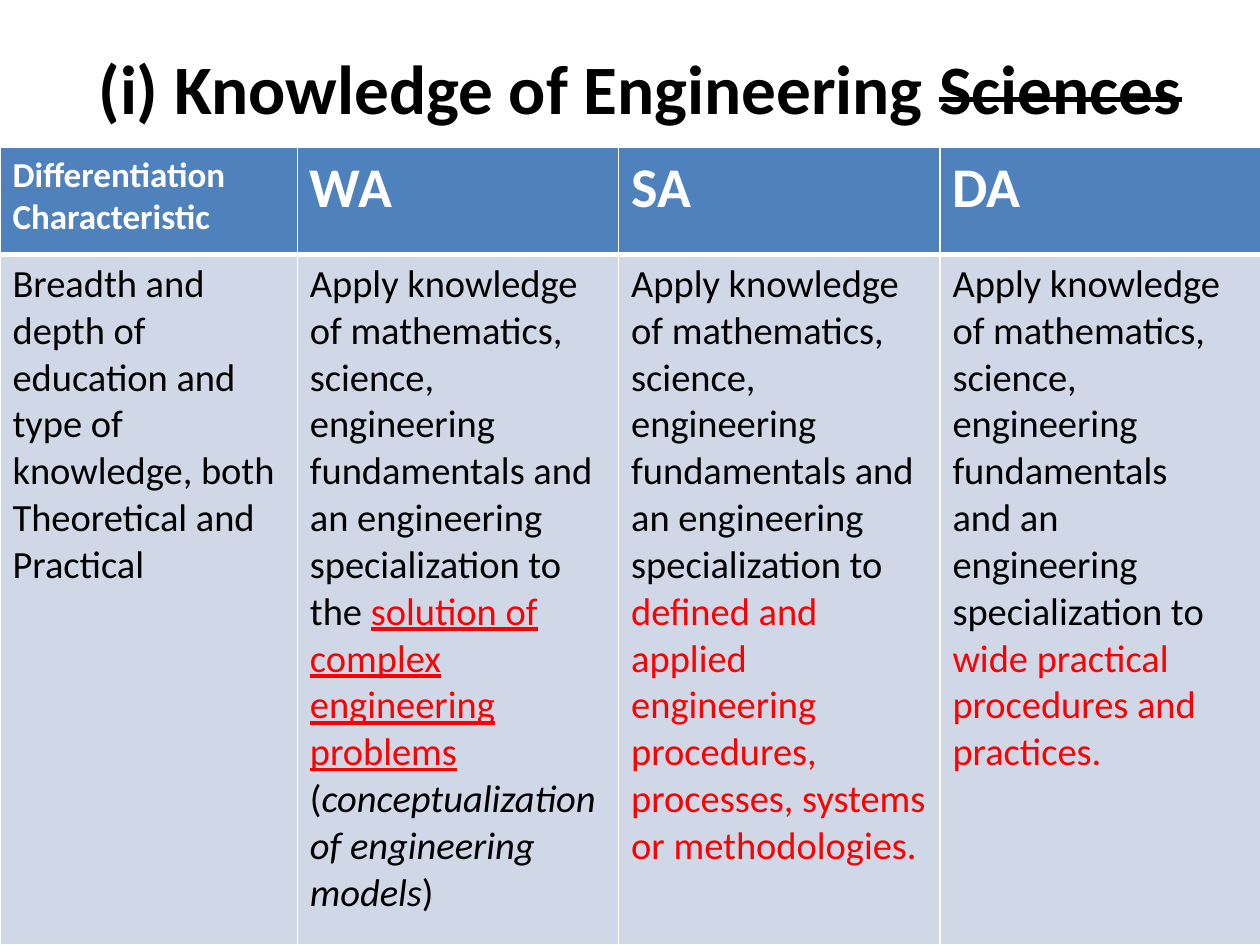
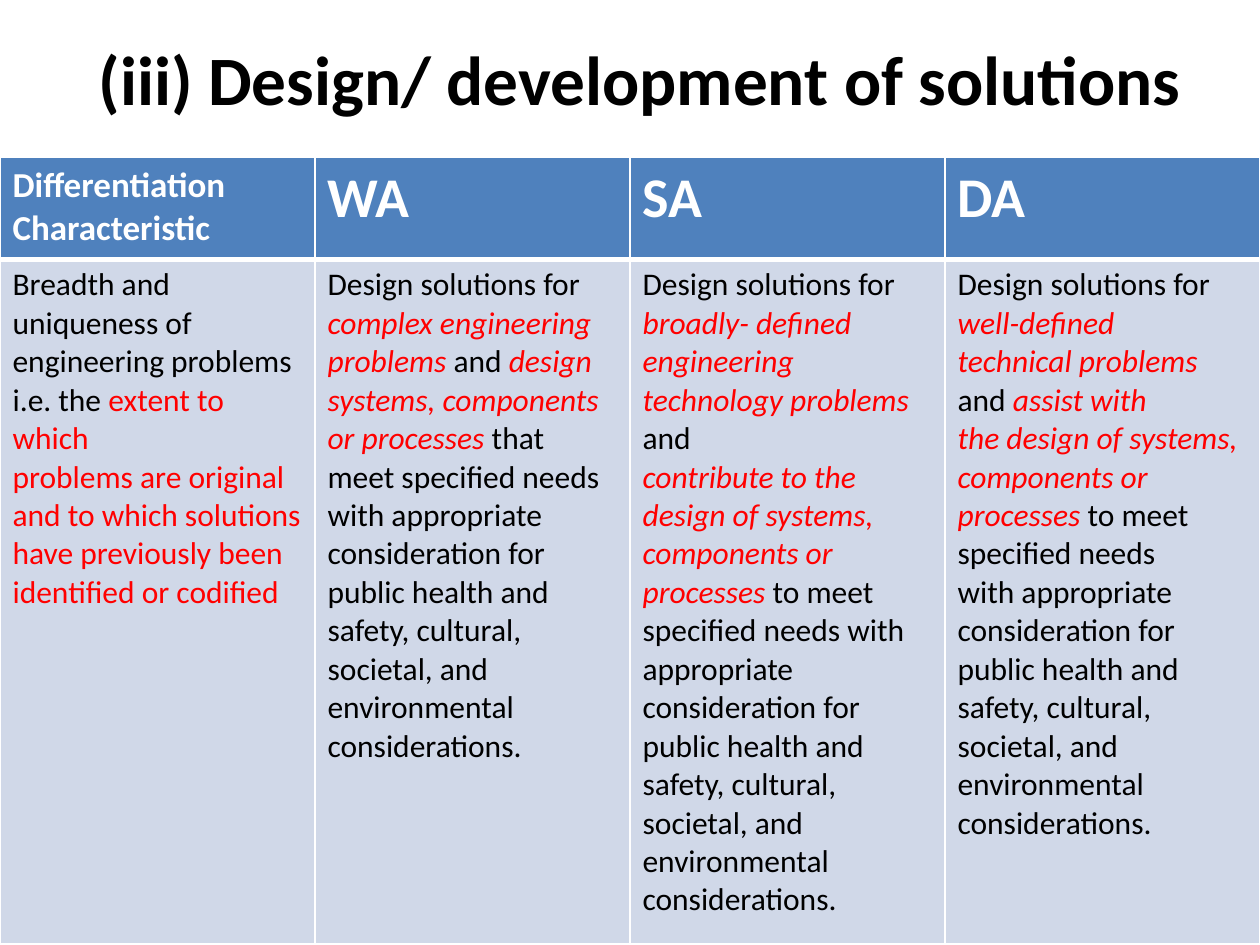
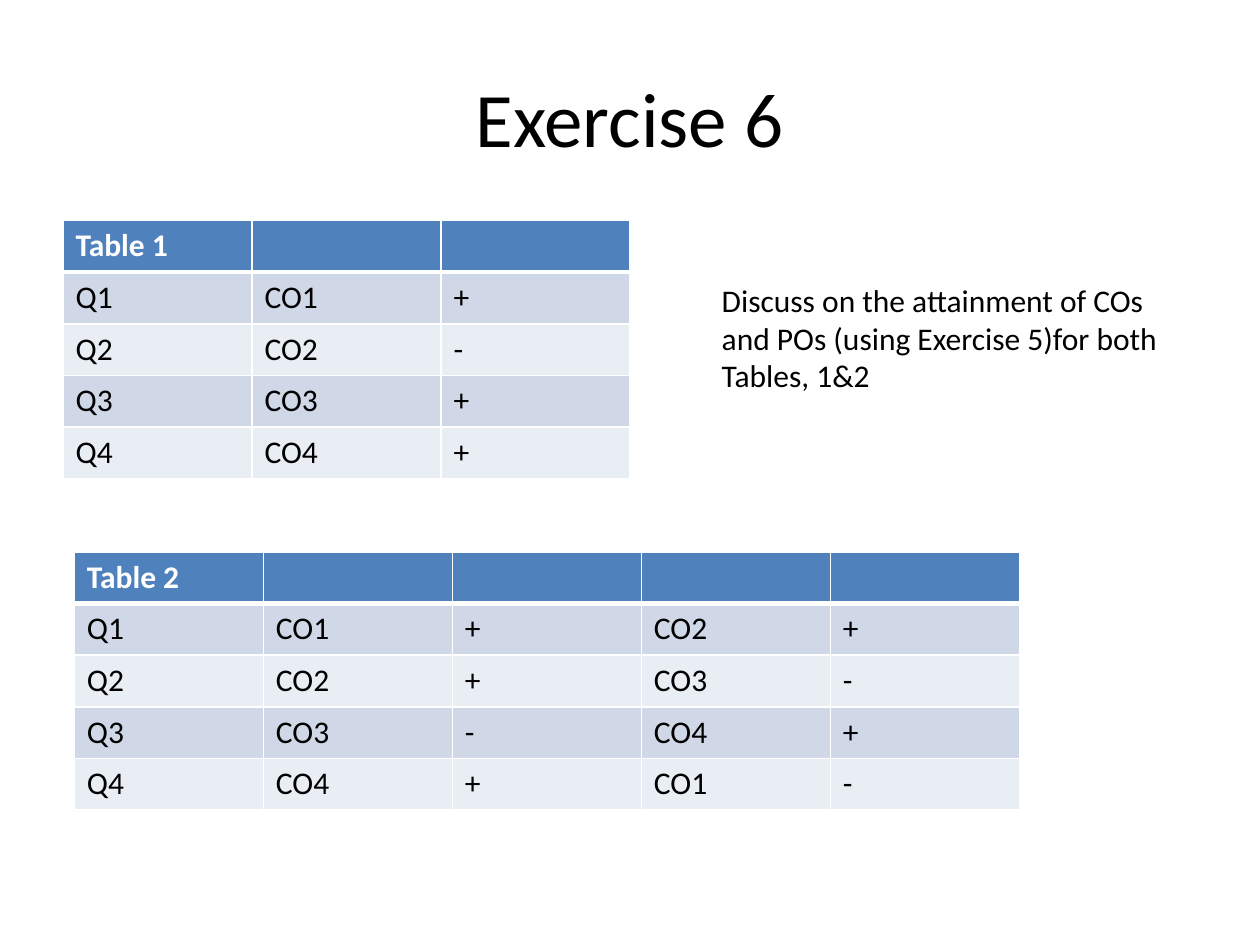
from dataclasses import dataclass

from lxml.etree import SubElement
from pptx import Presentation
from pptx.dml.color import RGBColor
from pptx.enum.text import MSO_ANCHOR, MSO_AUTO_SIZE, PP_ALIGN
from pptx.oxml.ns import qn
from pptx.util import Inches, Pt


@dataclass(frozen=True)
class Theme:
    font: str = "Calibri"
    black: str = "000000"
    white: str = "FFFFFF"
    red: str = "FF0000"
    header: str = "4F81BD"
    bands: tuple = ("D0D8E8", "E9EDF4")
    thin: float = 1
    thick: float = 3
    title: float = 44
    long_title: float = 39.6
    programme: float = 32
    label: float = 20
    wide_body: float = 22
    body: float = 18


theme = Theme()


def write(frame, paragraphs, align=None, **base):
    """Fill a frame; a paragraph is a string or a list of strings and (text, format) pairs."""
    for index, runs in enumerate(paragraphs):
        para = frame.paragraphs[0] if index == 0 else frame.add_paragraph()
        para.alignment = align
        for run in [runs] if isinstance(runs, str) else runs:
            text, extra = (run, {}) if isinstance(run, str) else run
            style = {"color": theme.black, "size": theme.body, **base, **extra}
            span = para.add_run()
            span.text = text
            span.font.name = theme.font
            span.font.size = Pt(style["size"])
            span.font.color.rgb = RGBColor.from_string(style["color"])
            span.font.bold = style.get("bold", False)
            span.font.italic = style.get("italic", False)
            span.font.underline = style.get("underline", False)
            if style.get("strike"):
                span._r.get_or_add_rPr().set("strike", "sngStrike")


def add_banded_table(slide, left, top, widths, heights, rows, size=theme.body):
    """Add a table whose cells are lists of paragraphs, with a header row and white rules."""
    table = slide.shapes.add_table(
        len(rows), len(widths), Inches(left), Inches(top),
        Inches(sum(widths)), Inches(sum(heights))).table
    for column, width in zip(table.columns, widths):
        column.width = Inches(width)
    for row_index, (row, height) in enumerate(zip(rows, heights)):
        table.rows[row_index].height = Inches(height)
        is_header = row_index == 0
        for column_index, paragraphs in enumerate(row):
            cell = table.cell(row_index, column_index)
            for side in ("lnL", "lnR", "lnT", "lnB"):
                below_header = (row_index, side) in ((0, "lnB"), (1, "lnT"))
                weight = theme.thick if below_header else theme.thin
                line = SubElement(cell._tc.get_or_add_tcPr(), qn(f"a:{side}"), w=str(Pt(weight)))
                SubElement(SubElement(line, qn("a:solidFill")), qn("a:srgbClr"), val=theme.white)
            cell.fill.solid()
            cell.fill.fore_color.rgb = RGBColor.from_string(
                theme.header if is_header else theme.bands[(row_index - 1) % 2])
            write(cell.text_frame, paragraphs, size=size, bold=is_header,
                  color=theme.white if is_header else theme.black)


RED = {"color": theme.red}
RED_ITALIC = {**RED, "italic": True}
RED_UNDERLINED = {**RED, "underline": True}

programme_header = [[[("Differentiation Characteristic", {"size": theme.label})]]] + [
    [[(name, {"size": theme.programme})]] for name in ("WA", "SA", "DA")]

knowledge_row = [
    ["Breadth and depth of",
     "education and type of knowledge, both",
     "Theoretical and Practical"],
    [["Apply knowledge of mathematics, science, engineering fundamentals and an "
      "engineering specialization to the ",
      ("solution of complex engineering problems", RED_UNDERLINED), " (",
      ("conceptualization of engineering models", {"italic": True}), ")"]],
    ["Apply knowledge of mathematics,",
     "science, engineering fundamentals and",
     ["an engineering specialization to ",
      ("defined and applied engineering procedures,", RED)],
     [("processes, systems or methodologies.", RED)]],
    ["Apply knowledge of mathematics,",
     "science, engineering fundamentals",
     "and an engineering specialization to",
     [("wide practical procedures and", RED)],
     [("practices.", RED)]],
]

design_row = [
    ["Breadth and",
     "uniqueness of",
     "engineering problems",
     ["i.e. the ", ("extent to which", RED)],
     [("problems are original", RED)],
     [("and to which solutions", RED)],
     [("have previously been", RED)],
     [("identified or codified", RED)]],
    [["Design solutions for ", ("complex engineering", RED_ITALIC)],
     [("problems ", RED_ITALIC), "and ", ("design systems, components", RED_ITALIC)],
     [("or processes ", RED_ITALIC),
      "that meet specified needs with appropriate consideration for public health "
      "and safety, cultural, societal, and"],
     "environmental considerations."],
    [["Design solutions for ", ("broadly- defined", RED_ITALIC)],
     [("engineering technology problems ", RED_ITALIC), "and"],
     [("contribute to the design of systems,", RED_ITALIC)],
     [("components or processes ", RED_ITALIC), "to meet"],
     "specified needs with appropriate",
     "consideration for public health and",
     "safety, cultural, societal, and",
     "environmental considerations."],
    [["Design solutions for ", ("well-defined", RED_ITALIC)],
     [("technical problems ", RED_ITALIC), "and", (" assist with", RED_ITALIC)],
     [("the design of systems, components or", RED_ITALIC)],
     [("processes ", RED_ITALIC), "to meet specified needs"],
     "with appropriate consideration for",
     "public health and safety, cultural,",
     "societal, and environmental",
     "considerations."],
]

deck = Presentation()
deck.slide_width, deck.slide_height = Inches(10), Inches(7.5)

titles = [
    (["(i) Knowledge of Engineering ", ("Sciences", {"strike": True})],
     (0.33, 0.23, 9.5, 0.92), theme.long_title, True),
    ("(iii) Design/ development of solutions", (0.33, 0.16, 9.5, 0.92), theme.long_title, True),
    ("Exercise 6", (0.5, 0.3, 9, 1.25), theme.title, False),
]
for text, place, size, bold in titles:
    title = deck.slides.add_slide(deck.slide_layouts[5]).shapes.title
    title.left, title.top, title.width, title.height = map(Inches, place)
    title.text_frame.auto_size = MSO_AUTO_SIZE.NONE
    title.text_frame.vertical_anchor = MSO_ANCHOR.MIDDLE
    write(title.text_frame, [text], align=PP_ALIGN.CENTER, size=size, bold=bold)
knowledge, design, exercise = deck.slides

add_banded_table(knowledge, 0, 1.17, [2.36] + [2.55] * 3, [0.85, 5.48],
                 [programme_header, knowledge_row], size=theme.wide_body)
add_banded_table(design, 0, 1.25, [2.5] * 4, [0.81, 5.43], [programme_header, design_row])

exercise_tables = [
    (0.5, 1.75, ["Table 1", "", ""],
     ["Q1 CO1 +", "Q2 CO2 -", "Q3 CO3 +", "Q4 CO4 +"]),
    (0.59, 4.38, ["Table 2", "", "", "", ""],
     ["Q1 CO1 + CO2 +", "Q2 CO2 + CO3 -", "Q3 CO3 - CO4 +", "Q4 CO4 + CO1 -"]),
]
for left, top, header, questions in exercise_tables:
    rows = [header] + [question.split() for question in questions]
    add_banded_table(exercise, left, top, [1.5] * len(header), [0.41] * len(rows),
                     [[[text] if text else [] for text in row] for row in rows])

task = exercise.shapes.add_textbox(Inches(5.63), Inches(2.18), Inches(3.76), Inches(1.01))
task.text_frame.word_wrap = False
task.text_frame.auto_size = MSO_AUTO_SIZE.SHAPE_TO_FIT_TEXT
write(task.text_frame, ["Discuss on the attainment of COs",
                        "and POs (using Exercise 5)for both",
                        "Tables, 1&2"])

deck.save("out.pptx")
